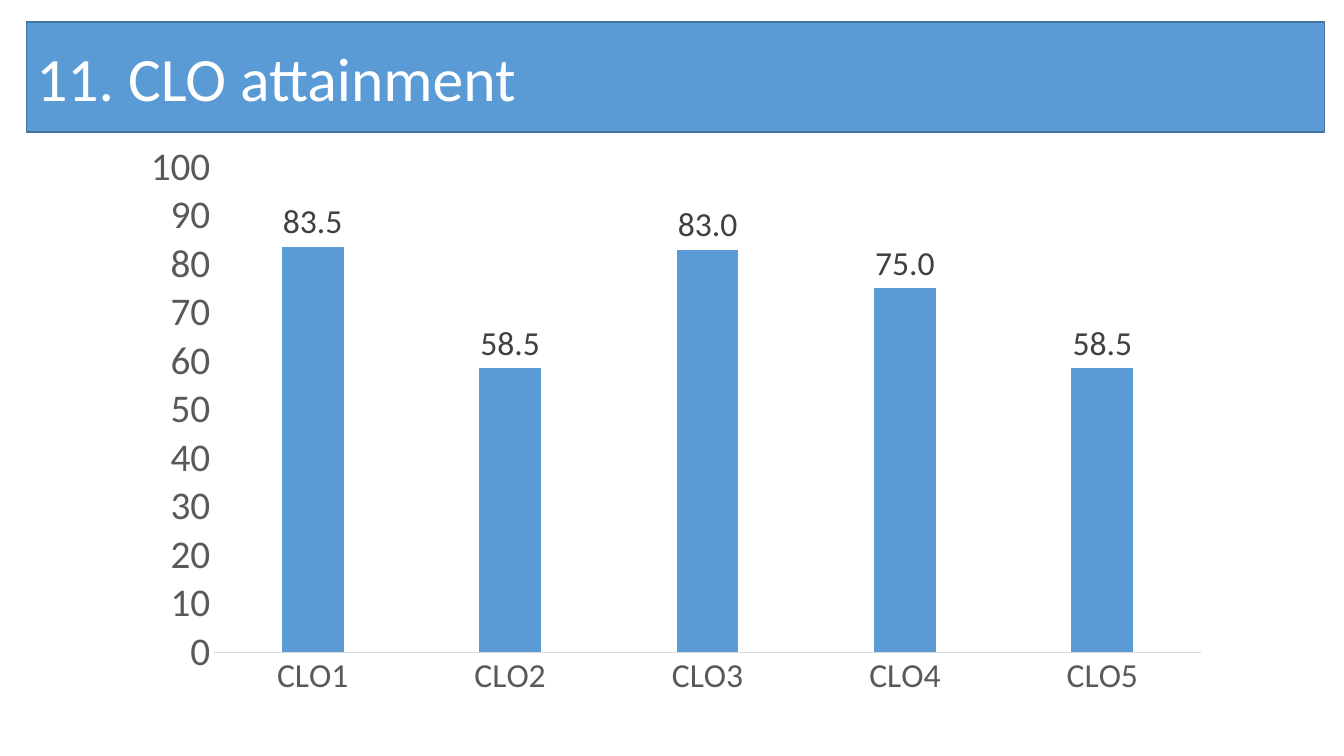
from dataclasses import dataclass

import lxml.etree
import pptx
import pptx.chart.data
import pptx.dml.color
import pptx.enum.chart
import pptx.enum.text
import pptx.oxml
import pptx.oxml.ns
import pptx.util

PX = 9144  # EMU per px, 100 px to the inch
FONT = "Calibri"
WHITE = pptx.dml.color.RGBColor(0xFF, 0xFF, 0xFF)
BLUE = pptx.dml.color.RGBColor(0x5B, 0x9B, 0xD5)
DARK_BLUE = pptx.dml.color.RGBColor(0x43, 0x73, 0x9E)
AXIS_TEXT = pptx.dml.color.RGBColor(0x59, 0x59, 0x59)
LABEL_TEXT = pptx.dml.color.RGBColor(0x40, 0x40, 0x40)
AXIS_LINE = pptx.dml.color.RGBColor(0xD9, 0xD9, 0xD9)


@dataclass(frozen=True)
class Box:
    left: int
    top: int
    width: int
    height: int

    def emu(self) -> tuple[int, ...]:
        return tuple(n * PX for n in (self.left, self.top, self.width, self.height))


@dataclass(frozen=True)
class Outcome:
    name: str
    score: float


TITLE_BOX = Box(26, 22, 1288, 109)
CHART_BOX = Box(128, 131, 1085, 572)
OUTCOMES = [
    Outcome("CLO1", 83.5),
    Outcome("CLO2", 58.5),
    Outcome("CLO3", 83),
    Outcome("CLO4", 75),
    Outcome("CLO5", 58.5),
]


def style_font(font, size: int, color: pptx.dml.color.RGBColor) -> None:
    font.name = FONT
    font.size = pptx.util.Pt(size)
    font.color.rgb = color


def add_title(s, text: str, box: Box) -> None:
    sp = s.shapes.title
    sp.left, sp.top, sp.width, sp.height = box.emu()

    # Rounded outline for the title placeholder
    geom = lxml.etree.SubElement(
        sp.element.spPr, pptx.oxml.ns.qn("a:prstGeom"), prst="roundRect")
    lxml.etree.SubElement(geom, pptx.oxml.ns.qn("a:avLst"))
    sp.fill.solid()
    sp.fill.fore_color.rgb = BLUE
    sp.line.color.rgb = DARK_BLUE
    sp.line.width = pptx.util.Pt(1)

    tf = sp.text_frame
    tf.text = text
    tf.word_wrap = True
    tf.auto_size = pptx.enum.text.MSO_AUTO_SIZE.NONE
    tf.vertical_anchor = pptx.enum.text.MSO_ANCHOR.MIDDLE
    p = tf.paragraphs[0]
    p.alignment = pptx.enum.text.PP_ALIGN.LEFT
    style_font(p.font, 44, WHITE)


def style_axis(axis, size: int) -> None:
    axis.has_major_gridlines = False
    axis.major_tick_mark = pptx.enum.chart.XL_TICK_MARK.NONE
    axis.minor_tick_mark = pptx.enum.chart.XL_TICK_MARK.NONE
    style_font(axis.tick_labels.font, size, AXIS_TEXT)


def add_attainment_chart(s, outcomes: list[Outcome], box: Box) -> None:
    data = pptx.chart.data.CategoryChartData()
    data.categories = [o.name for o in outcomes]
    data.add_series("Series 1", [o.score for o in outcomes])
    chart = s.shapes.add_chart(
        pptx.enum.chart.XL_CHART_TYPE.COLUMN_CLUSTERED, *box.emu(), data).chart
    chart.has_legend = False
    chart.has_title = False
    chart.font.name = FONT

    # Axes
    style_axis(chart.category_axis, 24)
    chart.category_axis.format.line.color.rgb = AXIS_LINE
    chart.category_axis.format.line.width = pptx.util.Pt(0.75)
    axis = chart.value_axis
    style_axis(axis, 28)
    axis.format.line.fill.background()
    axis.minimum_scale, axis.maximum_scale, axis.major_unit = 0, 100, 10
    axis.tick_labels.number_format = "0"
    axis.tick_labels.number_format_is_linked = False

    # Columns and their values
    plot = chart.plots[0]
    plot.vary_by_categories = False
    plot.gap_width = 219
    plot.overlap = -27
    fill = plot.series[0].format.fill
    fill.solid()
    fill.fore_color.rgb = BLUE
    labels = plot.series[0].data_labels
    labels.show_value = True
    labels.number_format = "0.0"
    labels.number_format_is_linked = False
    labels.position = pptx.enum.chart.XL_LABEL_POSITION.OUTSIDE_END
    style_font(labels.font, 24, LABEL_TEXT)


def main() -> None:
    prs = pptx.Presentation()
    prs.slide_width, prs.slide_height = 1333 * PX, 750 * PX
    s = prs.slides.add_slide(prs.slide_layouts.get_by_name("Title Only"))
    add_title(s, "11. CLO attainment", TITLE_BOX)
    add_attainment_chart(s, OUTCOMES, CHART_BOX)
    prs.save("out.pptx")


if __name__ == "__main__":
    main()
